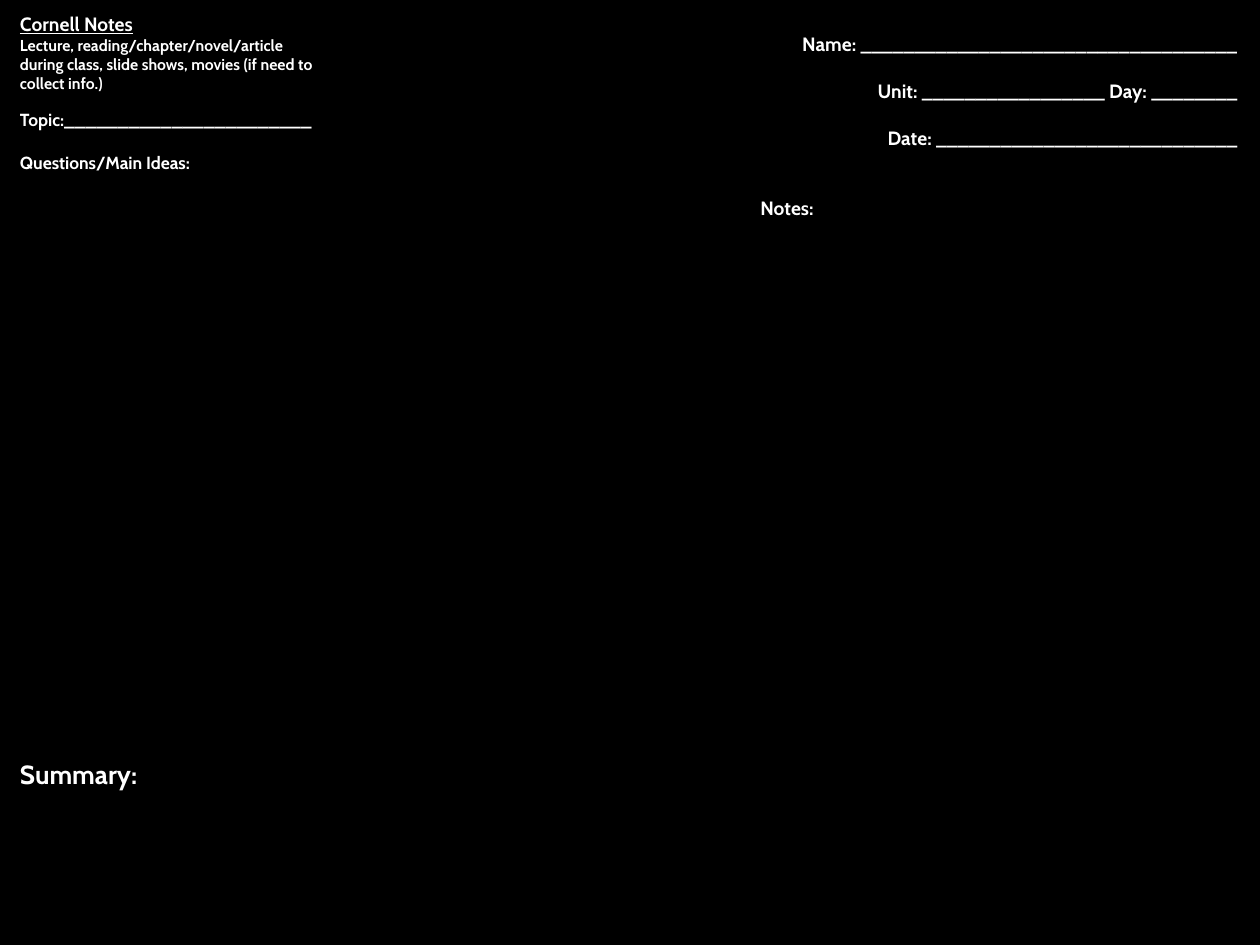
from lxml.etree import SubElement
from pptx import Presentation
from pptx.dml.color import RGBColor
from pptx.enum.text import PP_ALIGN as Align
from pptx.oxml.ns import qn
from pptx.util import Pt

PX = 914400 // 126
FONT, WHITE, BLACK = "Cabin", "FFFFFF", "000000"

# Paragraphs: runs of (text, size), alignment, line spacing, space before
PROMPTS = [
    ([("Cornell Notes", 11)], Align.LEFT, 1, 0),
    ([("Lecture, reading/chapter/novel/article during class, slide shows, "
       "movies (if need to collect info.)", 9)], Align.LEFT, 1, 0),
    ([("Topic:", 10), ("_" * 23, 11)], Align.LEFT, 1, 8),
    ([("Questions/Main Ideas:", 10)], Align.LEFT, 1, 12),
]
DETAILS = [
    ([("Name: " + "_" * 35, 11)], Align.RIGHT, 1.15, 0),
    ([("Unit: " + "_" * 17 + " Day: " + "_" * 8, 11)], Align.RIGHT, 1.15, 11.5),
    ([("Date: " + "_" * 28, 11)], Align.RIGHT, 1.15, 11.5),
    ([("Notes:", 11)], Align.CENTER, 1.15, 24.6),
]
SUMMARY = [([("Summary:", 15)], Align.LEFT, 1, 0)]

# Table grid
LEFT, TOP = 11, 0
COLUMNS = [316, 920]
NOTE_ROWS, SUMMARY_ROWS = 9, 3
ROWS = [227] + [57] * (NOTE_ROWS + SUMMARY_ROWS)
SUMMARY_START = 1 + NOTE_ROWS


def color(value):
    return RGBColor.from_string(value)


def add_borders(cell):
    props = cell._tc.get_or_add_tcPr()
    for index, side in enumerate(("lnL", "lnR", "lnT", "lnB")):
        line = SubElement(props, qn("a:" + side), w=str(Pt(1.5)))
        fill = SubElement(line, qn("a:solidFill"))
        SubElement(fill, qn("a:srgbClr"), val=BLACK)
        props.remove(line)
        props.insert(index, line)


def write(cell, paragraphs, top=13):
    cell.margin_left = cell.margin_right = 9 * PX
    cell.margin_top, cell.margin_bottom = top * PX, 13 * PX
    frame = cell.text_frame
    for index, (runs, align, spacing, before) in enumerate(paragraphs):
        para = frame.add_paragraph() if index else frame.paragraphs[0]
        para.alignment, para.line_spacing = align, float(spacing)
        if before:
            para.space_before = Pt(before)
        for text, size in runs:
            span = para.add_run()
            span.text = text
            span.font.size = Pt(size)
            span.font.name, span.font.bold = FONT, True
            span.font.color.rgb = color(WHITE)


deck = Presentation()
deck.slide_width, deck.slide_height = 1260 * PX, 945 * PX
page = deck.slides.add_slide(deck.slide_layouts[6])
page.background.fill.solid()
page.background.fill.fore_color.rgb = color(BLACK)

# Note sheet
table = page.shapes.add_table(
    len(ROWS), len(COLUMNS), LEFT * PX, TOP * PX,
    sum(COLUMNS) * PX, sum(ROWS) * PX).table
table.first_row = table.horz_banding = False
for column, width in zip(table.columns, COLUMNS):
    column.width = width * PX
for row, height in zip(table.rows, ROWS):
    row.height = height * PX
for cell in table.iter_cells():
    cell.fill.background()
    add_borders(cell)
for row in range(SUMMARY_START, len(ROWS)):
    table.cell(row, 0).merge(table.cell(row, 1))

# Headings
write(table.cell(0, 0), PROMPTS)
write(table.cell(0, 1), DETAILS, top=29)
write(table.cell(SUMMARY_START, 0), SUMMARY)
table.cell(0, 0).text_frame.paragraphs[0].runs[0].font.underline = True

deck.save("out.pptx")
